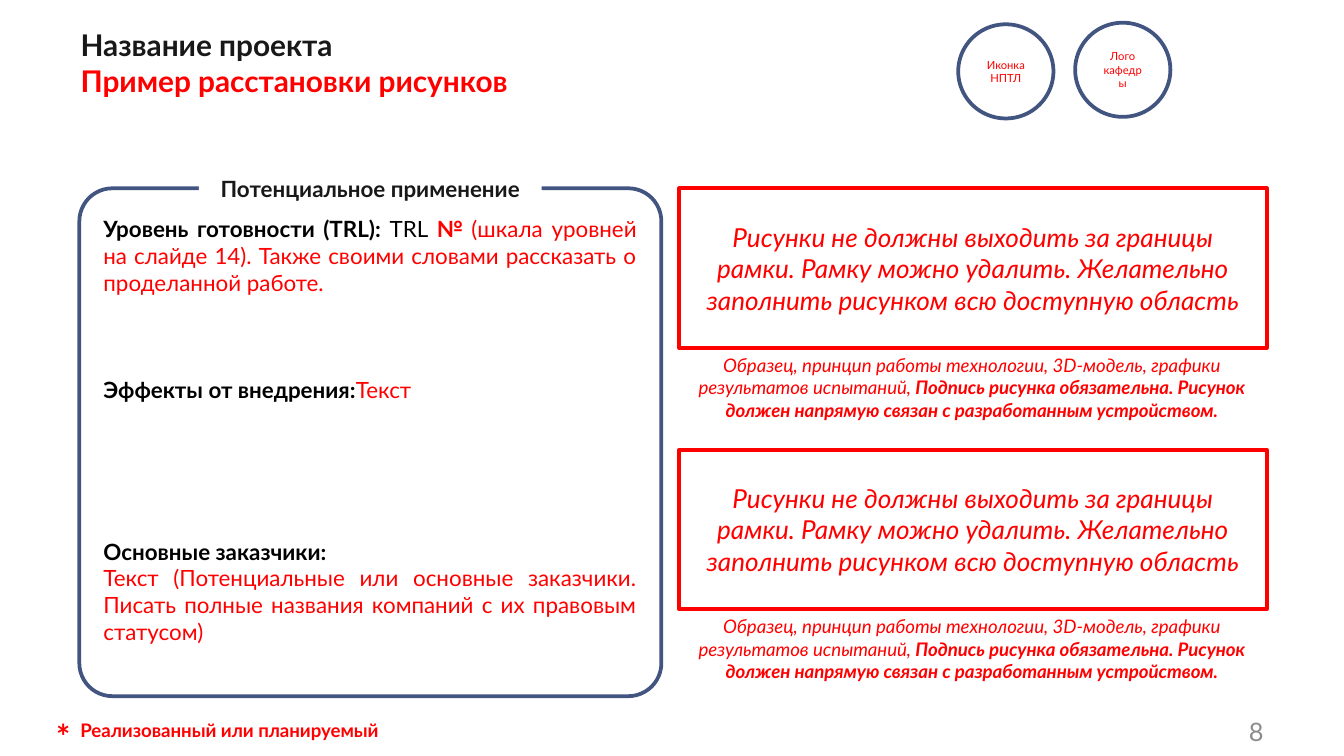
from lxml import etree
from pptx import Presentation
from pptx.dml.color import RGBColor
from pptx.enum.shapes import MSO_SHAPE
from pptx.enum.text import MSO_ANCHOR, MSO_AUTO_SIZE, PP_ALIGN
from pptx.oxml.ns import qn
from pptx.util import Cm, Pt

FONT = "Lato"
WHITE = RGBColor(0xFF, 0xFF, 0xFF)
BLACK = RGBColor(0, 0, 0)
DARK = RGBColor(0x18, 0x18, 0x18)
RED = RGBColor(0xFF, 0, 0)
BLUE = RGBColor(0x42, 0x54, 0x80)
GRAY = RGBColor(0x8C, 0x8C, 0x8C)

RECTANGLE = MSO_SHAPE.RECTANGLE
ROUNDED = MSO_SHAPE.ROUNDED_RECTANGLE
OVAL = MSO_SHAPE.OVAL
LEFT, CENTER, RIGHT, JUSTIFY = (
    PP_ALIGN.LEFT, PP_ALIGN.CENTER, PP_ALIGN.RIGHT, PP_ALIGN.JUSTIFY)
TOP, MIDDLE = MSO_ANCHOR.TOP, MSO_ANCHOR.MIDDLE
NO_FIT = MSO_AUTO_SIZE.NONE

FRAME_TEXT = ("Рисунки не должны выходить за границы рамки. Рамку можно удалить. "
              "Желательно заполнить рисунком всю доступную область")
CAPTION = [
    ("Образец, принцип работы технологии, 3D-модель, графики результатов испытаний, ",
     RED, False),
    ("Подпись рисунка обязательна. Рисунок должен напрямую связан с разработанным "
     "устройством.", RED, True),
]
BODY = [
    (0, [("Уровень готовности (TRL): ", BLACK, True),
         ("TRL ", BLACK, False),
         ("№ ", RED, True),
         ("(шкала уровней на слайде 14). Также своими словами рассказать о "
          "проделанной работе.", RED, False)]),
    (43.2, [("Эффекты от внедрения:", BLACK, True), ("Текст", RED, False)]),
    (72, [("Основные заказчики:", BLACK, True)]),
    (0, [("Текст (Потенциальные или основные заказчики. Писать полные названия "
          "компаний с их правовым статусом)", RED, False)]),
]


def place(shape, left, top, width, height):
    """Move and size a shape, given centimetres."""
    shape.left, shape.top = Cm(left), Cm(top)
    shape.width, shape.height = Cm(width), Cm(height)


def style_span(span, size, color, bold=False, italic=False):
    """Format one run of text."""
    span.font.name = FONT
    span.font.size = Pt(size)
    span.font.color.rgb = color
    span.font.bold = bold
    span.font.italic = italic


def write_para(para, spans, size, align=LEFT, italic=False):
    """Fill a paragraph with (text, colour, bold) spans."""
    para.alignment = align
    for text, color, bold in spans:
        span = para.add_run()
        span.text = text
        style_span(span, size, color, bold, italic)


def write_lines(shape, text, size, color, align=CENTER, bold=False, italic=False):
    """Set the text of a shape, one paragraph a line, in one style."""
    shape.text_frame.text = text
    for para in shape.text_frame.paragraphs:
        para.alignment = align
        for span in para.runs:
            style_span(span, size, color, bold, italic)


def add_panel(page, kind, bounds, outline=None):
    """Add a white preset shape with an optional outline."""
    panel = page.shapes.add_shape(kind, *map(Cm, bounds))
    panel.shadow.inherit = False
    panel.fill.solid()
    panel.fill.fore_color.rgb = WHITE
    if outline is None:
        panel.line.fill.background()
    else:
        panel.line.color.rgb = outline
        panel.line.width = Pt(2)
    panel.text_frame.vertical_anchor = MIDDLE
    return panel


def add_box(page, bounds, wrap=True, anchor=TOP):
    """Add an empty text box."""
    box = page.shapes.add_textbox(*map(Cm, bounds))
    box.text_frame.word_wrap = wrap
    box.text_frame.vertical_anchor = anchor
    return box


def fill_title(title):
    """Write the two-coloured slide title."""
    place(title, 1.27, 0.38, 16.64, 2.21)
    frame = title.text_frame
    frame.auto_size = NO_FIT
    frame.vertical_anchor = TOP
    frame.text = "Название проекта\vПример расстановки рисунков"
    para = frame.paragraphs[0]
    para.alignment = LEFT
    for span, color in zip(para.runs, (DARK, RED)):
        style_span(span, 16, color, bold=True)


def fill_body(body):
    """Write the application text without bullets."""
    place(body, 1.7, 3.94, 10.59, 8.46)
    frame = body.text_frame
    frame.auto_size = NO_FIT
    for index, (gap, spans) in enumerate(BODY):
        para = frame.add_paragraph() if index else frame.paragraphs[0]
        properties = para._p.get_or_add_pPr()
        properties.set("marL", "0")
        properties.set("indent", "0")
        etree.SubElement(properties, qn("a:buNone"))
        para.space_before = Pt(gap)
        write_para(para, spans, 12, JUSTIFY)


def add_figure(page, left, top):
    """Add a figure frame with its caption below."""
    frame = add_panel(page, RECTANGLE, (left, top, 11.1, 3.02), RED)
    write_lines(frame, FRAME_TEXT, 14, RED, italic=True)
    frame.text_frame.paragraphs[0].space_after = Pt(3)
    caption = add_box(page, (left, top + 3, 11.05, 1.96))
    write_para(caption.text_frame.paragraphs[0], CAPTION, 10, CENTER, italic=True)


def add_badge(page, left, top, text):
    """Add a round logo placeholder."""
    badge = add_panel(page, OVAL, (left, top, 1.8, 1.78), BLUE)
    write_lines(badge, text, 6, RED)


def main():
    """Build the slide and save the deck."""
    deck = Presentation()
    deck.slide_width, deck.slide_height = Cm(25.4), Cm(14.29)
    page = deck.slides.add_slide(deck.slide_layouts[1])
    title, body = page.placeholders

    panel = add_panel(page, ROUNDED, (1.5, 3.56, 11, 9.6), BLUE)
    panel.adjustments[0] = 0.065
    title.element.addprevious(panel.element)
    fill_title(title)
    fill_body(body)

    heading = add_panel(page, RECTANGLE, (3.76, 3.18, 6.48, 0.76))
    heading.text_frame.word_wrap = False
    write_lines(heading, "Потенциальное применение", 12, DARK, bold=True)

    for row in range(2):
        add_figure(page, 12.84, 3.56 + 4.94 * row)

    add_badge(page, 18.11, 0.46, "Иконка НПТЛ")
    add_badge(page, 20.32, 0.43, "Лого\nкафедры")

    star = add_box(page, (0.81, 13.41, 0.81, 1.02), wrap=False)
    write_lines(star, "*", 18, RED, LEFT, bold=True)
    footnote = add_box(page, (1.27, 13.46, 6.48, 0.69), wrap=False)
    write_lines(footnote, "Реализованный или планируемый", 10, RED, LEFT, bold=True)
    number = add_box(page, (22.71, 13.44, 1.42, 0.76), anchor=MIDDLE)
    write_lines(number, "8", 13.6, GRAY, RIGHT)

    deck.save("out.pptx")


if __name__ == "__main__":
    main()
